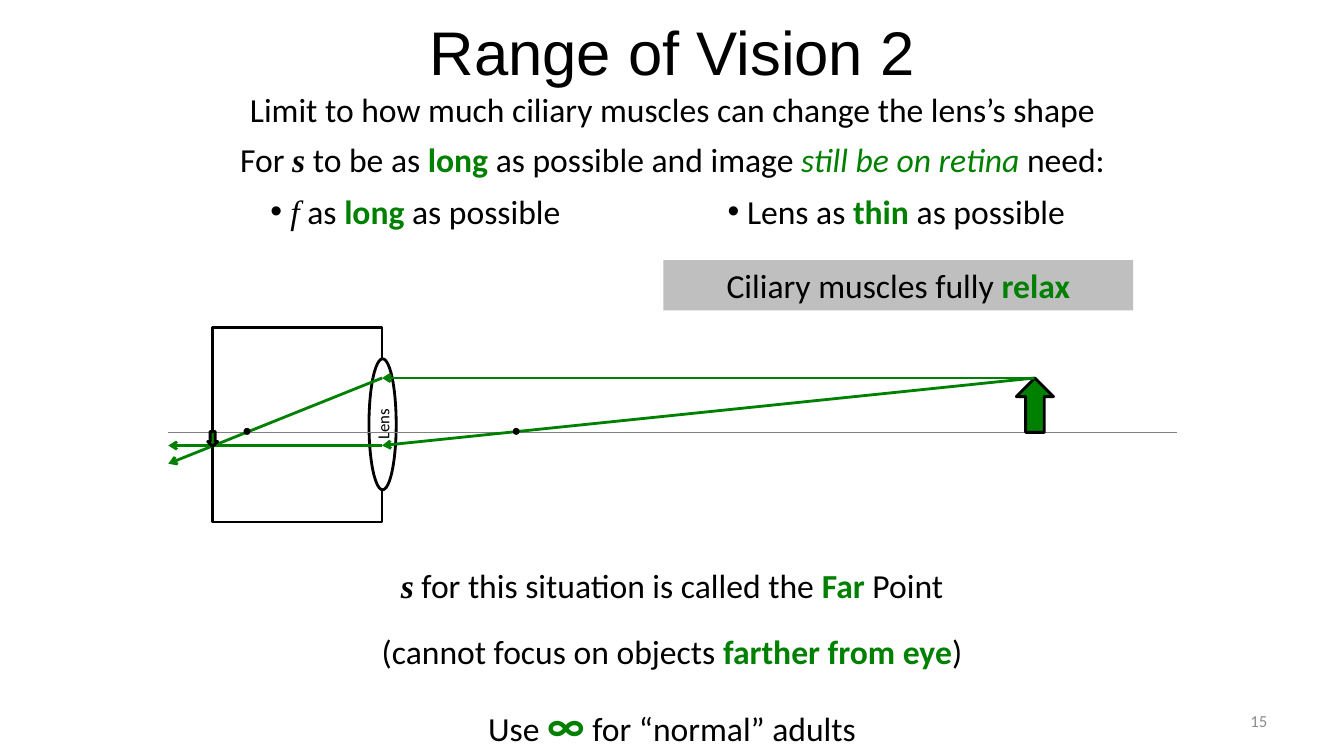
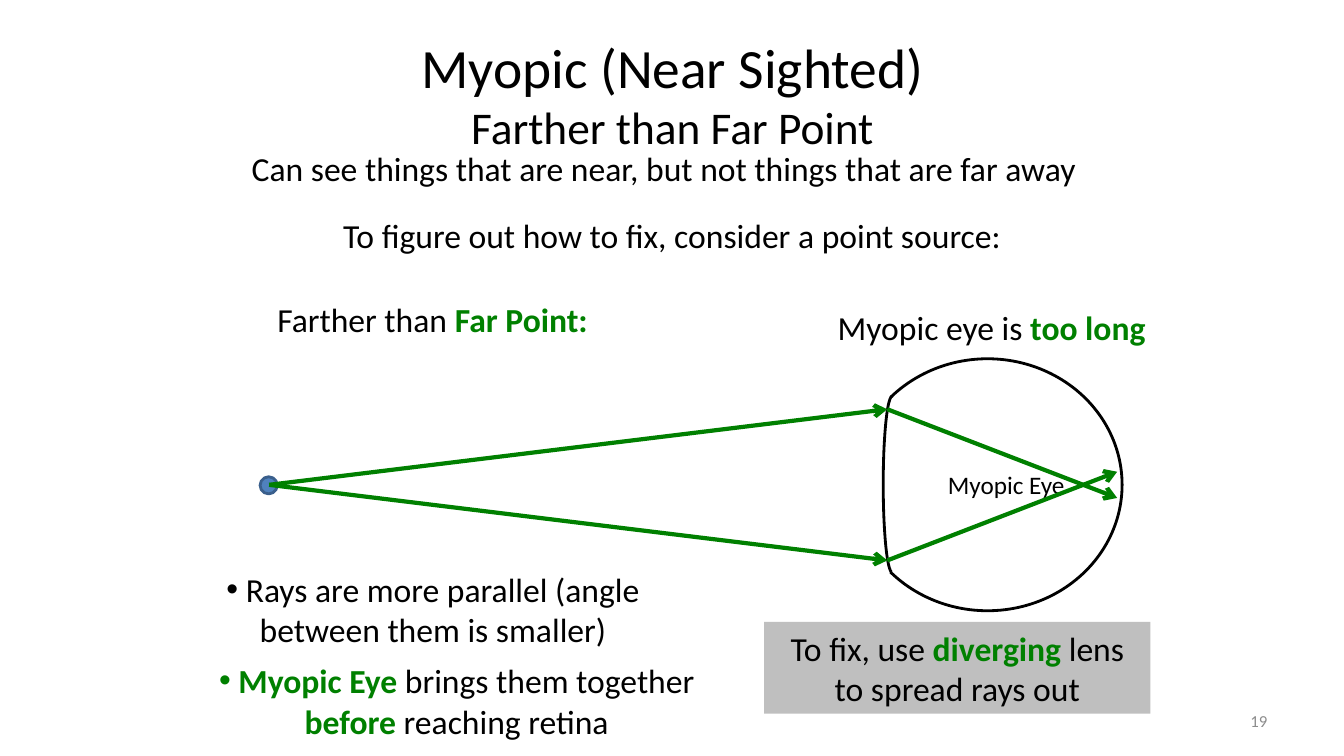
from lxml.etree import SubElement
from pptx import Presentation
from pptx.dml.color import RGBColor as RGB
from pptx.enum.shapes import MSO_CONNECTOR as CONN, MSO_SHAPE as SHAPE
from pptx.enum.text import MSO_ANCHOR as ANCHOR, MSO_AUTO_SIZE as AUTO, PP_ALIGN as ALIGN
from pptx.oxml.ns import qn
from pptx.util import Inches, Pt

COLORS = {
    "black": "000000", "green": "008000", "gray": "BFBFBF", "axis": "808080",
    "number": "8C8C8C", "blue": "4F81BD", "navy": "3A5F8C",
}
BASE = {"name": "Calibri", "size": 24, "color": "black"}
STYLES = {
    "plain": {},
    "key": {"bold": True, "color": "green"},
    "stress": {"italic": True, "color": "green"},
    "symbol": {"name": "Times New Roman", "italic": True, "bold": True},
    "letter": {"name": "Times New Roman", "italic": True},
    "infinity": {"bold": True, "color": "green", "size": 32},
    "heading": {"name": "Arial", "size": 44},
    "topic": {"size": 39.6},
    "subtopic": {"size": 32.4},
    "lens": {"size": 12},
    "eye": {"size": 18},
    "number": {"size": 12, "color": "number"},
}


def rgb(name):
    """Return the named palette colour."""
    return RGB.from_string(COLORS[name])


def place(sp, box):
    """Move a shape to a box given in inches."""
    for attr, value in zip(("left", "top", "width", "height"), box):
        setattr(sp, attr, Inches(value))


def write(sp, parts, align=ALIGN.CENTER):
    """Write (text, style) parts as one paragraph; "\\n" breaks the line."""
    tf = sp.text_frame
    tf.word_wrap = True
    tf.auto_size = AUTO.NONE
    p = tf.paragraphs[0]
    p.alignment = align
    p.space_before = Pt(0)
    for text, style in parts:
        if text == "\n":
            p.add_line_break()
            continue
        r = p.add_run()
        r.text = text
        for attr, value in {**BASE, **STYLES[style]}.items():
            if attr == "color":
                r.font.color.rgb = rgb(value)
            else:
                setattr(r.font, attr, Pt(value) if attr == "size" else value)
    return p


def label(s, box, *parts, align=ALIGN.CENTER, anchor=ANCHOR.TOP):
    """Add a text box."""
    sp = s.shapes.add_textbox(*map(Inches, box))
    write(sp, parts, align)
    sp.text_frame.vertical_anchor = anchor


def bullet(sp, box, *parts):
    """Fill a body placeholder with one centred bullet."""
    place(sp, box)
    pPr = write(sp, parts)._p.get_or_add_pPr()
    for attr in ("marL", "indent"):
        pPr.set(attr, "0")
    SubElement(pPr, qn("a:buFont")).set("typeface", "Arial")
    SubElement(pPr, qn("a:buChar")).set("char", "•")


def shape(s, kind, box, fill=None, line="black"):
    """Add a preset shape with an optional fill and a 2 pt outline."""
    sp = s.shapes.add_shape(kind, *map(Inches, box))
    sp.shadow.inherit = False
    if fill:
        sp.fill.solid()
        sp.fill.fore_color.rgb = rgb(fill) if fill in COLORS else RGB.from_string(fill)
    else:
        sp.fill.background()
    if line:
        sp.line.color.rgb = rgb(line)
        sp.line.width = Pt(2)
    else:
        sp.line.fill.background()
    return sp


def callout(s, box, *parts):
    """Add a gray box holding a conclusion."""
    sp = shape(s, SHAPE.RECTANGLE, box, "gray", None)
    write(sp, parts)
    sp.text_frame.vertical_anchor = ANCHOR.MIDDLE


def line(s, start, end, color="green", width=2, arrow=True):
    """Draw a straight line, with an arrowhead at its end for a ray."""
    c = s.shapes.add_connector(CONN.STRAIGHT, *map(Inches, (*start, *end)))
    c.line.color.rgb = rgb(color)
    c.line.width = Pt(width)
    if arrow:
        SubElement(c.line._get_or_add_ln(), qn("a:tailEnd")).set("type", "arrow")
    SubElement(c._element.spPr, qn("a:effectLst"))


def new_slide(prs, title_box, title, number):
    """Add a slide with its title and page number."""
    s = prs.slides.add_slide(prs.slide_layouts[3])
    place(s.shapes.title, title_box)
    write(s.shapes.title, title)
    s.shapes.title.text_frame.vertical_anchor = ANCHOR.MIDDLE
    label(s, (9.56, 6.95, 3.11, 0.4), (number, "number"),
          align=ALIGN.RIGHT, anchor=ANCHOR.MIDDLE)
    return s


def lens_diagram(s, x, y):
    """Draw the box eye, its lens and the rays from a distant object."""
    axis, tip, low = y + 1.04, y + 0.5, y + 1.17
    lens_x, object_x = x + 2.12, x + 8.59
    shape(s, SHAPE.RECTANGLE, (x + 0.44, y, 1.68, 1.93))
    lens = shape(s, SHAPE.OVAL, (lens_x - 0.13, y + 0.31, 0.27, 1.3), "FFFFFF")
    write(lens, [("Lens", "lens")])
    lens.text_frame.vertical_anchor = ANCHOR.MIDDLE
    lens.text_frame._txBody.bodyPr.set("vert", "vert270")
    line(s, (x, axis), (x + 10, axis), "axis", 0.75, False)
    shape(s, SHAPE.UP_ARROW, (object_x - 0.18, tip, 0.37, axis - tip), "green")
    for hit, leave in ((tip, y + 1.35), (low, low)):
        line(s, (object_x, tip), (lens_x, hit))
        line(s, (lens_x, hit), (x, leave))
    shape(s, SHAPE.DOWN_ARROW, (x + 0.39, axis - 0.01, 0.1, 0.15), "green")
    for focus in (0.76, 3.43):
        shape(s, SHAPE.OVAL, (x + focus, axis - 0.03, 0.04, 0.04), "black")


def myopic_diagram(s, x, y):
    """Draw a point source and its rays crossing inside a long eye."""
    axis, source_x, lens_x = y + 1.25, x + 0.09, x + 6.22
    shape(s, SHAPE.OVAL, (x, axis - 0.08, 0.17, 0.17), "blue", "navy")
    arcs = (((x + 6.18, y + 0.37, 0.18, 1.75), (54.38, 161.96)),
            ((x + 5.88, y, 2.67, 2.5), (133.27, 82.86)))
    for box, angles in arcs:
        arc = shape(s, SHAPE.ARC, box)
        for i, angle in enumerate(angles):
            arc.adjustments[i] = angle
    write(arc, [("Myopic Eye", "eye")])
    arc.text_frame.vertical_anchor = ANCHOR.MIDDLE
    for side in (1, -1):
        hit = (lens_x, axis + side * 0.75)
        line(s, (source_x, axis), hit, width=3)
        line(s, hit, (x + 8.5, axis - side * 0.13), width=3)


def range_slide(prs):
    """Build the slide on the far point of the eye."""
    s = new_slide(prs, (2.17, 0, 9, 1), [("Range of Vision 2", "heading")], "15")
    label(s, (1.84, 0.83, 9.66, 0.51),
          ("Limit to how much ciliary muscles can change the lens’s shape", "plain"))
    label(s, (1.67, 1.33, 10, 0.5),
          ("For ", "plain"), ("s", "symbol"), (" to be as ", "plain"), ("long ", "key"),
          ("as possible and image ", "plain"), ("still be on retina ", "stress"),
          ("need:", "plain"))
    bullet(s.placeholders[1], (2.12, 1.84, 4, 0.5),
           (" f", "letter"), (" as ", "plain"), ("long ", "key"), ("as possible", "plain"))
    bullet(s.placeholders[2], (6.65, 1.84, 4.48, 0.5),
           (" Lens as ", "plain"), ("thin ", "key"), ("as possible", "plain"))
    callout(s, (6.58, 2.58, 4.66, 0.5), ("Ciliary muscles fully ", "plain"), ("relax", "key"))
    lens_diagram(s, 1.67, 3.25)
    label(s, (3.33, 5.56, 6.67, 0.5),
          ("s", "symbol"), (" for this situation is called the ", "plain"),
          ("Far ", "key"), ("Point", "plain"))
    label(s, (2.83, 6.21, 7.67, 0.5),
          ("(cannot focus on objects ", "plain"), ("farther from eye", "key"), (")", "plain"))
    label(s, (4.12, 6.86, 5.09, 0.64),
          ("Use ", "plain"), ("∞", "infinity"), (" for “normal” adults", "plain"))


def myopic_slide(prs):
    """Build the slide on the near sighted eye."""
    title = [("Myopic (Near Sighted)", "topic"), ("\n", "plain"),
             ("Farther than Far Point", "subtopic")]
    s = new_slide(prs, (0.67, 0.3, 12, 1.25), title, "19")
    label(s, (2, 1.42, 9.17, 0.51),
          ("Can see things that are near, but not things that are far away", "plain"))
    label(s, (2.08, 2.08, 9.17, 0.51),
          ("To figure out how to fix, consider a point source:", "plain"))
    label(s, (2.33, 2.92, 3.92, 0.5), ("Farther than ", "plain"), ("Far Point:", "key"))
    label(s, (8, 3, 3.67, 0.51), ("Myopic eye is ", "plain"), ("too long", "key"))
    myopic_diagram(s, 2.58, 3.56)
    bullet(s.placeholders[1], (1.88, 5.59, 4.83, 0.91),
           (" Rays are more parallel (angle between them is smaller)", "plain"))
    bullet(s.placeholders[2], (1.83, 6.5, 5.4, 0.91),
           (" Myopic Eye ", "key"), ("brings them together ", "plain"),
           ("before", "key"), (" reaching retina", "plain"))
    callout(s, (7.58, 6.17, 3.83, 0.91),
            ("To fix, use ", "plain"), ("diverging ", "key"),
            ("lens to spread rays out", "plain"))


def main():
    """Build and save the presentation."""
    prs = Presentation()
    prs.slide_width, prs.slide_height = Inches(13.33), Inches(7.5)
    range_slide(prs)
    myopic_slide(prs)
    prs.save("out.pptx")


if __name__ == "__main__":
    main()
